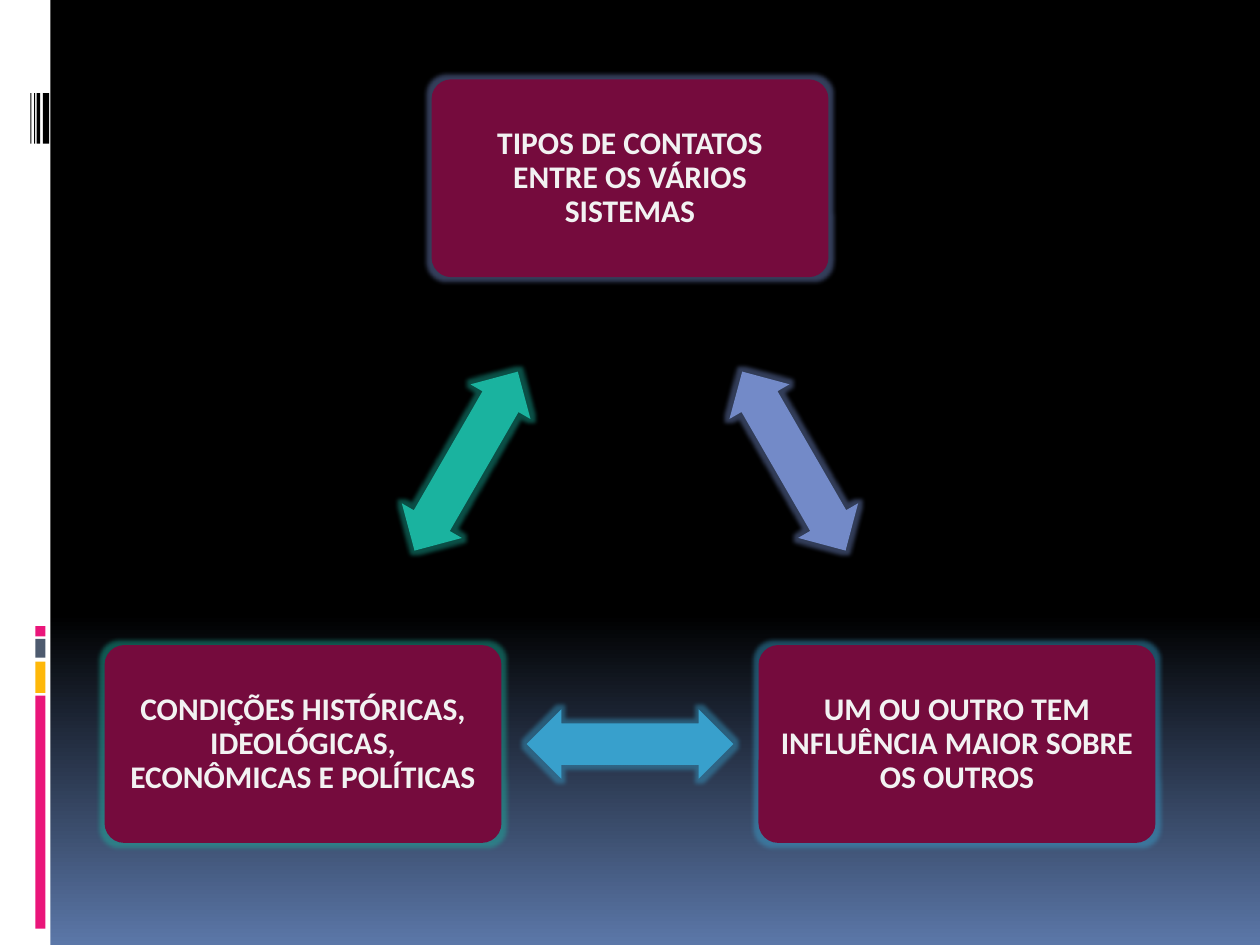
from copy import deepcopy

from lxml import etree
from pptx import Presentation
from pptx.dml.color import RGBColor
from pptx.enum import shapes, text
from pptx.oxml.ns import qn
from pptx.util import Inches, Pt

PURPLE, BLUE, GREEN = "738AC8", "38A0CC", "1AB39F"
WINE, PINK = "750B3D", "EA157A"
BOX_W, BOX_H = 3.15, 1.57
ARROW_W, ARROW_H = 1.64, 0.55


def color(hex_code):
    return RGBColor.from_string(hex_code)


def add_block(slide, kind, box, fill):
    block = slide.shapes.add_shape(kind, *(Inches(n) for n in box))
    block.fill.solid()
    block.fill.fore_color.rgb = color(fill)
    block.line.fill.background()
    block.shadow.inherit = False
    return block


def add_glow(block, hex_code):
    effects = block._element.spPr.find(qn("a:effectLst"))
    glow = etree.SubElement(effects, qn("a:glow"), rad=str(Pt(5)))
    tint = etree.SubElement(glow, qn("a:srgbClr"), val=hex_code)
    etree.SubElement(tint, qn("a:alpha"), val="45000")


def paint_background(slide):
    fill = slide.background.fill
    fill.gradient()
    fill.gradient_angle = 270
    start, end = fill.gradient_stops
    start.color.rgb = color("000000")
    end.color.rgb = color("5B77A8")
    # Black holds until 65 % of the height
    first = fill._xPr.find(".//" + qn("a:gs"))
    middle = deepcopy(first)
    middle.set("pos", "65000")
    first.addnext(middle)


def draw_side_strip(slide, left, top, width, height):
    rect = shapes.MSO_SHAPE.RECTANGLE
    add_block(slide, rect, (left, top, width, height), "FFFFFF")
    # Coloured bars
    for y, h, fill in ((5.52, 1.85, PINK), (5.25, 0.25, "FEB80A"),
                       (5.07, 0.15, "4E5B6F"), (4.97, 0.08, PINK)):
        add_block(slide, rect, (left + 0.28, top + y, 0.08, h), fill)
    # Thin black stripes
    for x, w in ((0.34, 0.05), (0.29, 0.03), (0.27, 0.01), (0.24, 0.01)):
        add_block(slide, rect, (left + x, top + 0.74, w, 0.4), "000000")


def add_topic(slide, left, top, wording, glow):
    topic = add_block(slide, shapes.MSO_SHAPE.ROUNDED_RECTANGLE,
                      (left, top, BOX_W, BOX_H), WINE)
    topic.adjustments[0] = 0.1
    add_glow(topic, glow)
    frame = topic.text_frame
    frame.word_wrap = True
    frame.vertical_anchor = text.MSO_ANCHOR.MIDDLE
    frame.margin_left = frame.margin_right = Inches(0.12)
    frame.margin_top = frame.margin_bottom = Inches(0.12)
    paragraph = frame.paragraphs[0]
    paragraph.alignment = text.PP_ALIGN.CENTER
    paragraph.line_spacing = 0.9
    run = paragraph.add_run()
    run.text = wording
    run.font.name = "Calibri"
    run.font.size = Pt(18)
    run.font.bold = True
    run.font.color.rgb = color("F2F2F2")


def add_arrow(slide, left, top, angle, fill):
    arrow = add_block(slide, shapes.MSO_SHAPE.LEFT_RIGHT_ARROW,
                      (left, top, ARROW_W, ARROW_H), fill)
    arrow.adjustments[0], arrow.adjustments[1] = 0.6, 0.5
    arrow.rotation = angle
    add_glow(arrow, fill)


def draw_cycle(slide, left, top, width, height):
    middle = left + width / 2
    right, bottom = left + width - BOX_W, top + height - BOX_H
    side_arrow_top = top + (height - ARROW_H) / 2
    offset = 1.3  # from the middle to the centre of a slanted arrow

    # Topics at the corners of the triangle
    add_topic(slide, middle - BOX_W / 2, top,
              "TIPOS DE CONTATOS ENTRE OS VÁRIOS SISTEMAS", PURPLE)
    add_topic(slide, right, bottom,
              "UM OU OUTRO TEM INFLUÊNCIA MAIOR SOBRE OS OUTROS", BLUE)
    add_topic(slide, left, bottom,
              "CONDIÇÕES HISTÓRICAS, IDEOLÓGICAS, ECONÔMICAS E POLÍTICAS",
              GREEN)

    # Arrows along its sides
    arrow_left = middle - ARROW_W / 2
    add_arrow(slide, arrow_left + offset, side_arrow_top, 60, PURPLE)
    add_arrow(slide, arrow_left, bottom + (BOX_H - ARROW_H) / 2, 180, BLUE)
    add_arrow(slide, arrow_left - offset, side_arrow_top, 300, GREEN)


def main():
    deck = Presentation()
    deck.slide_width, deck.slide_height = Inches(10), Inches(7.5)
    slide = deck.slides.add_slide(deck.slide_layouts[6])
    paint_background(slide)
    draw_side_strip(slide, 0, 0, 0.4, 7.5)
    draw_cycle(slide, 0.83, 0.63, 8.34, 6.06)
    deck.save("out.pptx")


if __name__ == "__main__":
    main()
